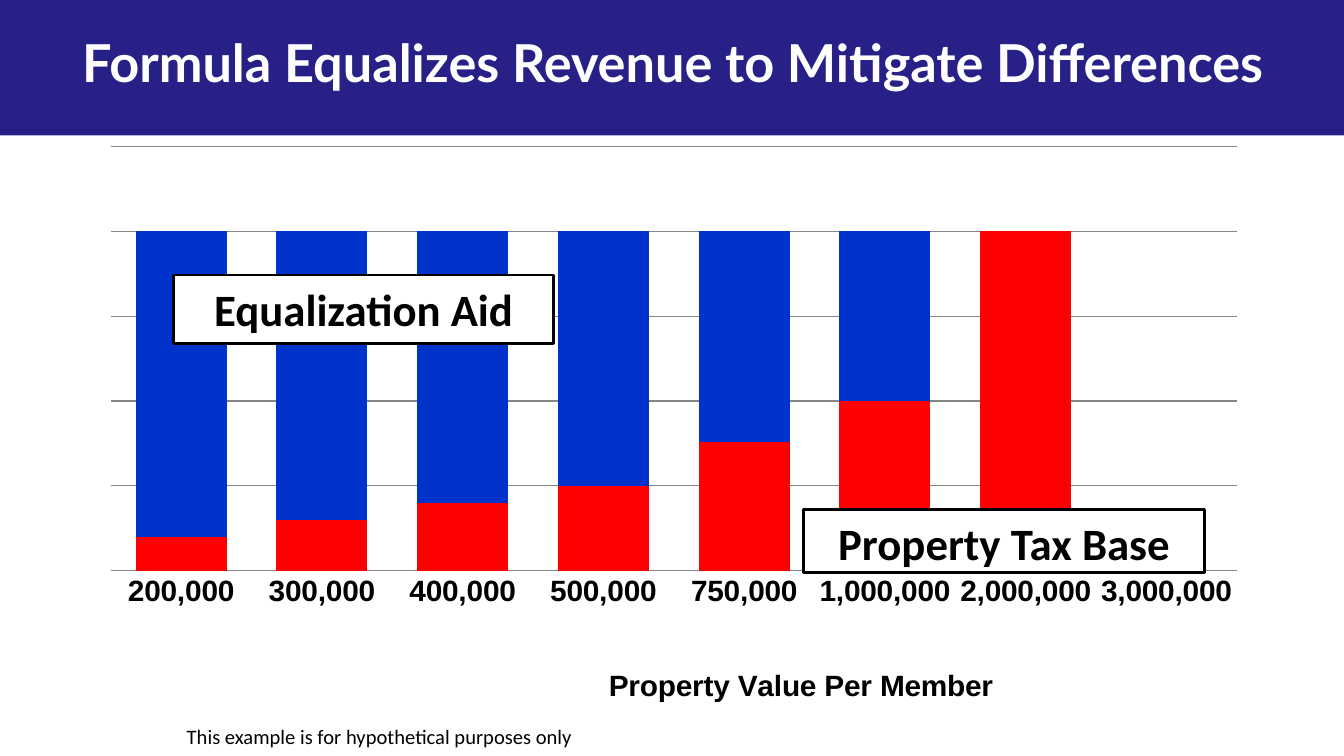
from lxml import etree
from pptx import Presentation
from pptx import util as u
from pptx.chart.data import CategoryChartData
from pptx.dml.color import RGBColor
from pptx.enum import chart as ch, shapes, text
from pptx.oxml import parse_xml
from pptx.oxml.ns import nsdecls, qn

COLORS = {"band": "262087", "white": "FFFFFF", "black": "000000",
          "grid": "868686", "tax": "FF0000", "aid": "0033CC"}
VALUES = [200000, 300000, 400000, 500000, 750000, 1000000, 2000000, 3000000]
TAX = [10, 15, 20, 25, 38, 50, 100]
AID = [100 - v for v in TAX]


def rgb(name):
    """Return the named palette colour."""
    return RGBColor.from_string(COLORS[name])


def cm(box):
    """Convert a box in centimetres to lengths."""
    return [u.Cm(v) for v in box]


def style(font, size, name, color="black", bold=False):
    """Format a font."""
    font.size, font.name, font.bold = u.Pt(size), name, bold
    font.color.rgb = rgb(color)


def write(sp, words, align, *font):
    """Write one formatted paragraph in a shape."""
    tf = sp.text_frame
    tf.text, tf.word_wrap = words, True
    tf.vertical_anchor = text.MSO_ANCHOR.TOP
    p = tf.paragraphs[0]
    p.alignment = align
    style(p.runs[0].font, *font)


def add_box(s, box, fill, line=None):
    """Add a flat rectangle."""
    sp = s.shapes.add_shape(shapes.MSO_SHAPE.RECTANGLE, *cm(box))
    sp.shadow.inherit = False
    sp.fill.solid()
    sp.fill.fore_color.rgb = rgb(fill)
    if line:
        sp.line.color.rgb = rgb(line)
        sp.line.width = u.Pt(1.5)
    else:
        sp.line.fill.background()
    return sp


def add_header(s, box, words):
    """Place the title on a full-width band."""
    x, y, w, h = box
    band = add_box(s, box, "band")
    s.shapes._spTree.insert(2, band._element)
    sp = s.shapes.title
    sp.left, sp.top, sp.width, sp.height = cm((x + 0.45, y + 0.45, w - 0.86, 1.45))
    write(sp, words, text.PP_ALIGN.CENTER, 28, "Lato", "white", True)


def add_label(s, box, words):
    """Add an outlined label over the columns."""
    sp = add_box(s, box, "white", "black")
    write(sp, words, text.PP_ALIGN.CENTER, 24, "Calibri", "black", True)


def add_note(s, box, words):
    """Add the footnote."""
    sp = s.shapes.add_textbox(*cm(box))
    write(sp, words, text.PP_ALIGN.LEFT, 11, "Calibri")


def layout_xml(x, y, w=None, h=None):
    """Return a manual chart layout in fractions of the chart."""
    rows = [("layoutTarget", "inner")] if w else []
    rows += [("xMode", "edge"), ("yMode", "edge"), ("x", x), ("y", y)]
    rows += [("w", w), ("h", h)] if w else []
    root = parse_xml(f"<c:layout {nsdecls('c')}><c:manualLayout/></c:layout>")
    for tag, val in rows:
        etree.SubElement(root[0], qn(f"c:{tag}")).set("val", str(val))
    return root


def set_layout(parent, index, *place):
    """Replace the layout of a chart part."""
    for old in parent.findall(qn("c:layout")):
        parent.remove(old)
    parent.insert(index, layout_xml(*place))


def add_columns(s, box):
    """Add the stacked column chart."""
    data = CategoryChartData(number_format="#,##0")
    data.categories = VALUES
    data.categories.number_format = "#,##0"
    data.add_series("Series 1", TAX)
    data.add_series("Series 2", AID)
    chart = s.shapes.add_chart(ch.XL_CHART_TYPE.COLUMN_STACKED, *cm(box), data).chart
    chart.has_legend = chart.has_title = False
    style(chart.font, 10, "Calibri")

    plot = chart.plots[0]
    plot.gap_width, plot.overlap, plot.vary_by_categories = 55, 100, False
    for series, color in zip(plot.series, ("tax", "aid")):
        series.format.fill.solid()
        series.format.fill.fore_color.rgb = rgb(color)

    val = chart.value_axis
    val.visible = False
    val.minimum_scale, val.maximum_scale, val.major_unit = 0, 125, 25
    val.has_major_gridlines = True
    cat = chart.category_axis
    cat.major_tick_mark = ch.XL_TICK_MARK.NONE
    cat.tick_labels.number_format = "#,##0"
    cat.tick_labels.number_format_is_linked = False
    style(cat.tick_labels.font, 16, "Arial", bold=True)
    for line in (val.major_gridlines.format.line, cat.format.line):
        line.color.rgb = rgb("grid")
        line.width = u.Pt(0.75)
    tf = cat.axis_title.text_frame
    tf.text = "Property Value Per Member"
    style(tf.paragraphs[0].runs[0].font, 16, "Arial", bold=True)

    set_layout(cat.axis_title._element, 1, 0.44, 0.93)
    set_layout(chart._chartSpace.chart.plotArea, 0, 0.02, 0.02, 0.96, 0.75)


def main():
    """Build the slide."""
    prs = Presentation()
    prs.slide_width, prs.slide_height = u.Cm(25.4), u.Cm(14.29)
    s = prs.slides.add_slide(prs.slide_layouts[5])
    add_header(s, (-0.02, 0, 25.42, 2.56),
               "Formula Equalizes Revenue to Mitigate Differences")
    add_note(s, (3.28, 13.56, 10.95, 0.73),
             "This example is for hypothetical purposes only")
    add_columns(s, (1.65, 2.56, 22.17, 10.87))
    add_label(s, (3.28, 5.2, 7.19, 1.29), "Equalization Aid")
    add_label(s, (15.19, 9.63, 7.57, 1.19), "Property Tax Base")
    prs.save("out.pptx")


if __name__ == "__main__":
    main()
